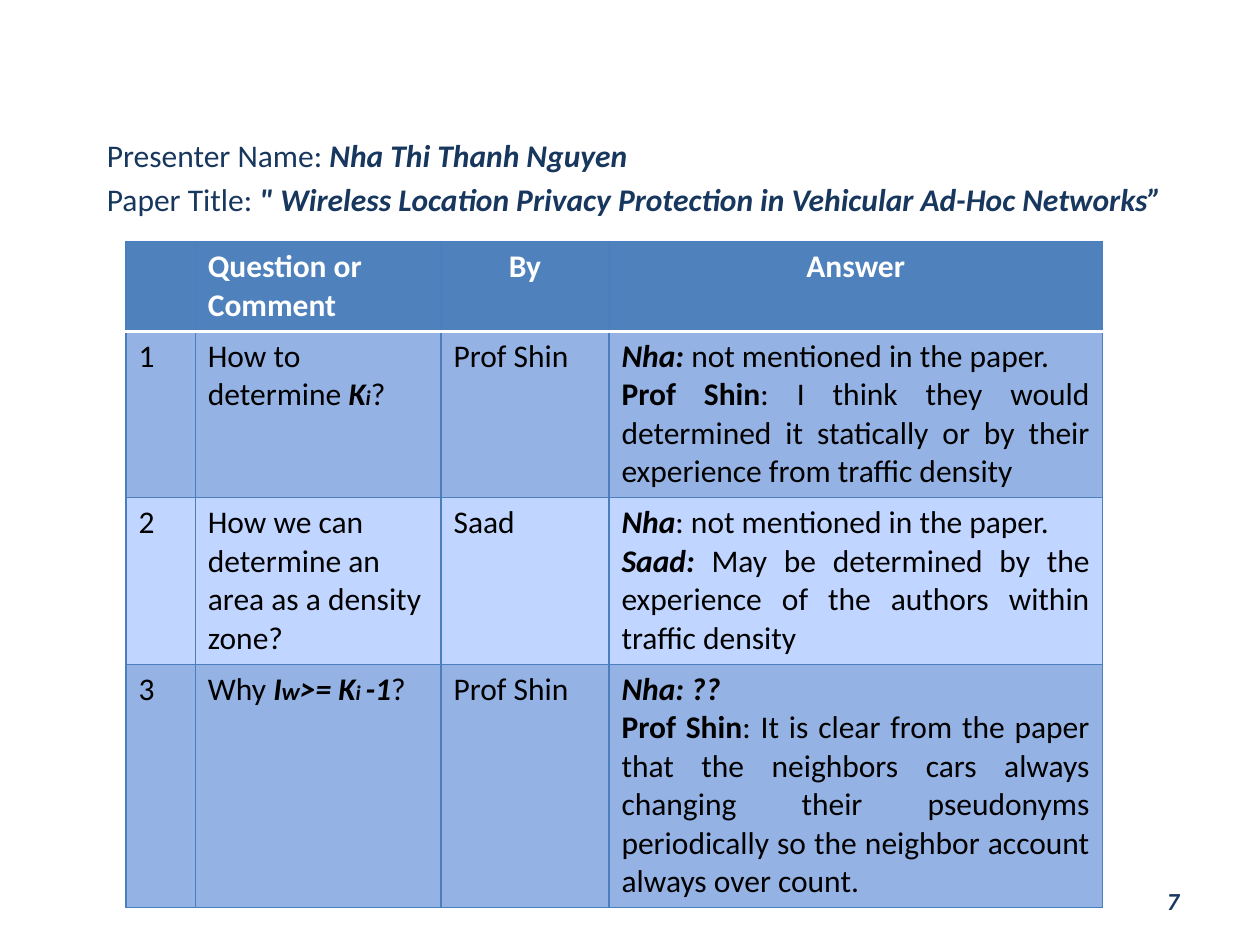
from lxml import etree
from pptx import Presentation
from pptx.dml.color import RGBColor
from pptx.enum import text
from pptx.oxml import ns
from pptx.util import Pt

NAVY = RGBColor(0x17, 0x37, 0x5E)
BLUE = RGBColor(0x4F, 0x81, 0xBD)
BORDER = RGBColor(0x4B, 0x7E, 0xBC)
BAND_DARK = RGBColor(0x94, 0xB2, 0xE4)
BAND_LIGHT = RGBColor(0xC0, 0xD5, 0xFF)
WHITE = RGBColor(0xFF, 0xFF, 0xFF)
BLACK = RGBColor(0, 0, 0)
LEFT, CENTER, RIGHT, JUSTIFY = (text.PP_ALIGN.LEFT, text.PP_ALIGN.CENTER,
                                text.PP_ALIGN.RIGHT, text.PP_ALIGN.JUSTIFY)


def write_paragraphs(frame, paragraphs, color, align=LEFT, size=18, style=""):
    """Each paragraph is a list of plain strings or (text, style[, size]); b is bold, i italic."""
    for index, parts in enumerate(paragraphs):
        para = frame.add_paragraph() if index else frame.paragraphs[0]
        para.alignment = align
        para.font.name = "Calibri"
        para.font.size = Pt(size)
        para.font.color.rgb = color
        para.font.bold = "b" in style
        para.font.italic = "i" in style
        for part in parts:
            words, run_style, *run_size = (part, "") if isinstance(part, str) else part
            span = para.add_run()
            span.text = words
            if run_style:
                span.font.bold = "b" in run_style
                span.font.italic = "i" in run_style
            if run_size:
                span.font.size = Pt(run_size[0])


def add_border(cell, side, color, width):
    properties = cell._tc.get_or_add_tcPr()
    line = etree.SubElement(properties, ns.qn(f"a:ln{side}"), w=str(Pt(width)))
    fill = etree.SubElement(line, ns.qn("a:solidFill"))
    etree.SubElement(fill, ns.qn("a:srgbClr"), val=str(color))


deck = Presentation()
deck.slide_width, deck.slide_height = Pt(720), Pt(540)
page = deck.slides.add_slide(deck.slide_layouts[6])

# Presenter and paper
box = page.shapes.add_textbox(Pt(54), Pt(74), Pt(624), Pt(60))
box.text_frame.word_wrap = True
write_paragraphs(box.text_frame, [
    ["Presenter Name: ", ("Nha Thi Thanh Nguyen", "bi")],
    ["Paper Title: ",
     ("\" Wireless Location Privacy Protection in Vehicular Ad-Hoc Networks”", "bi")],
], NAVY)
box.text_frame.paragraphs[1].space_before = Pt(3.6)

# Questions and answers
rows = [
    [[], [["Question or Comment"]], [["By"]], [["Answer"]]],
    [[["1"]],
     [["How to determine ", ("K", "bi"), ("i", "bi", 12), "?"]],
     [["Prof Shin"]],
     [[("Nha: ", "bi"), "not mentioned in the paper."],
      [("Prof Shin", "b"), ": I think they would determined it statically or by their "
       "experience from traffic density"]]],
    [[["2"]],
     [["How we can determine an area as a density zone?"]],
     [["Saad"]],
     [[("Nha", "bi"), ": not mentioned in the paper."],
      [("Saad: ", "bi"), "May be determined by the experience of the authors within "
       "traffic density"]]],
    [[["3"]],
     [["Why ", ("I", "bi"), ("w", "bi", 14), (">= K", "bi"), ("i ", "bi", 12),
       ("-1", "bi"), "?"]],
     [["Prof Shin"]],
     [[("Nha: ??", "bi")],
      [("Prof Shin", "b"), ": It is clear from the paper that the neighbors cars always "
       "changing their pseudonyms periodically so the neighbor account always over count."]]],
]
column_widths = [39.6, 140.4, 96, 282]
row_heights = [51.2, 95.2, 95.2, 139.2]
row_fills = [BLUE, BAND_DARK, BAND_LIGHT, BAND_DARK]
header_aligns = [LEFT, LEFT, CENTER, CENTER]
body_aligns = [LEFT, LEFT, LEFT, JUSTIFY]

table = page.shapes.add_table(len(rows), len(column_widths), Pt(72), Pt(138),
                              Pt(sum(column_widths)), Pt(sum(row_heights))).table
for column, width in zip(table.columns, column_widths):
    column.width = Pt(width)
for row_index, row in enumerate(rows):
    table.rows[row_index].height = Pt(row_heights[row_index])
    header = row_index == 0
    aligns = header_aligns if header else body_aligns
    for column_index, paragraphs in enumerate(row):
        cell = table.cell(row_index, column_index)
        write_paragraphs(cell.text_frame, paragraphs, WHITE if header else BLACK,
                         aligns[column_index], style="b" if header else "")
        for side in "LRTB":
            divider = (row_index, side) in [(0, "B"), (1, "T")]
            add_border(cell, side, WHITE if divider else BORDER, 2 if divider else 0.75)
        cell.fill.solid()
        cell.fill.fore_color.rgb = row_fills[row_index]

# Page number
box = page.shapes.add_textbox(Pt(516), Pt(500.5), Pt(165), Pt(28.8))
box.text_frame.word_wrap = True
box.text_frame.vertical_anchor = text.MSO_ANCHOR.MIDDLE
write_paragraphs(box.text_frame, [["7"]], NAVY, RIGHT, 14, "bi")

deck.save("out.pptx")
